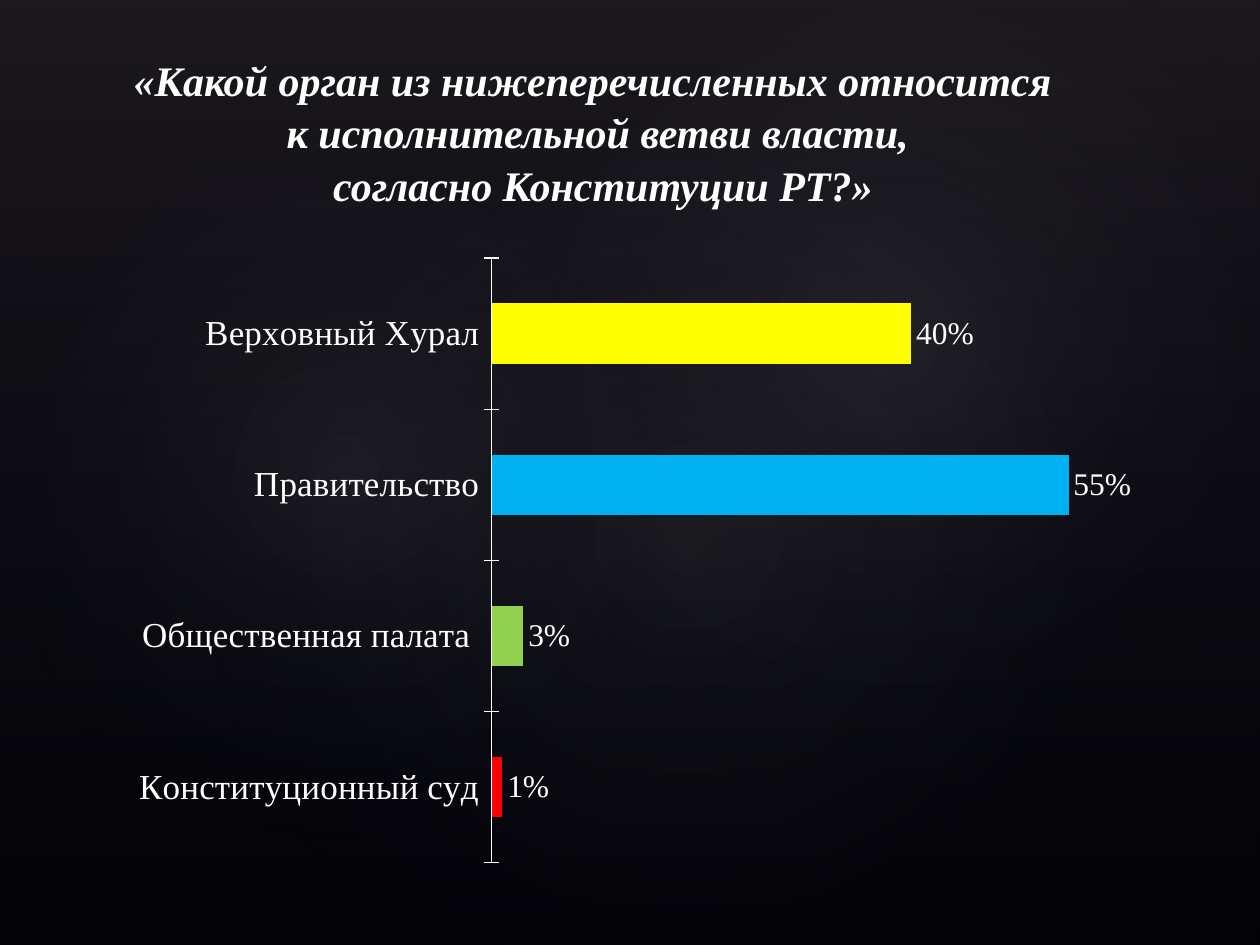
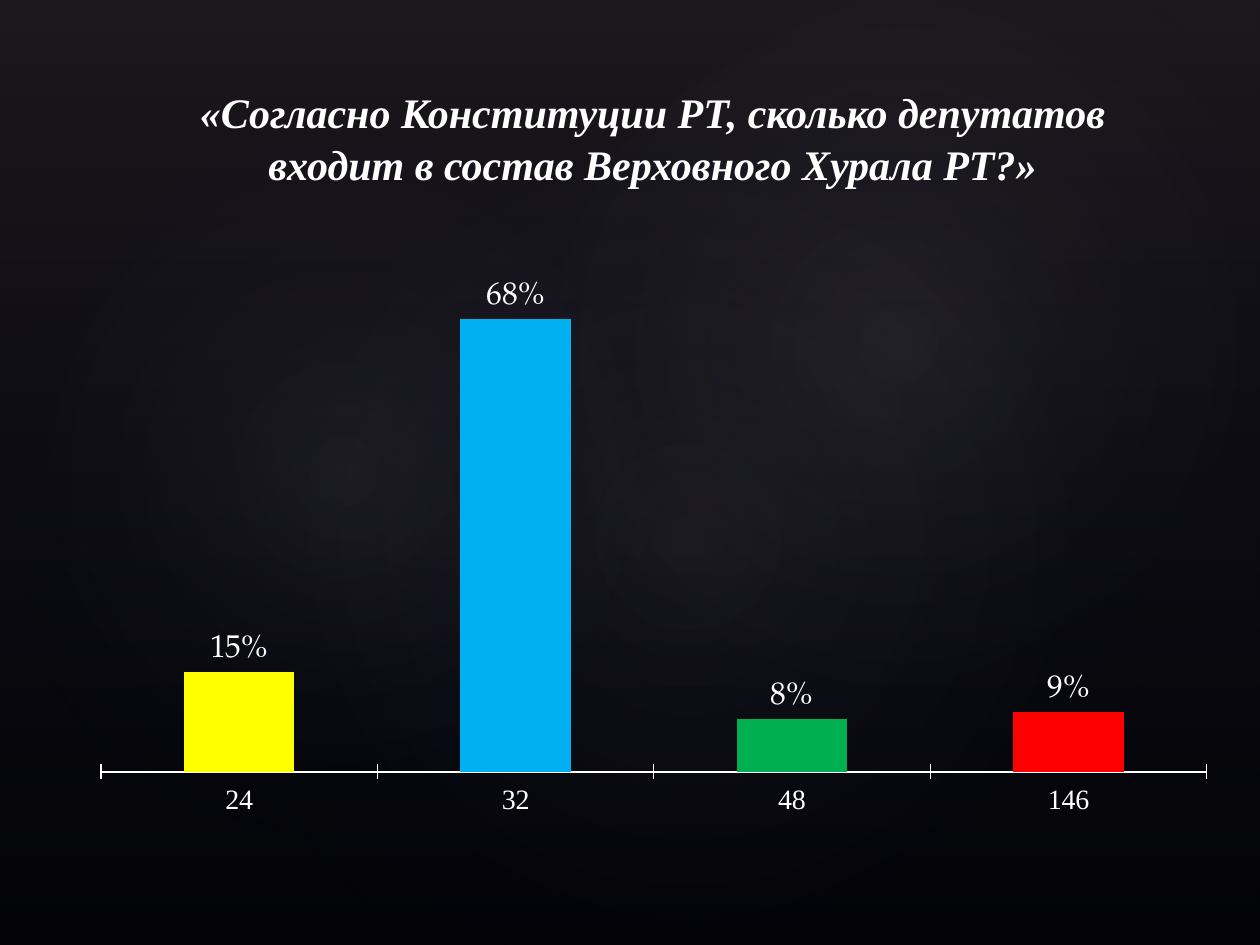
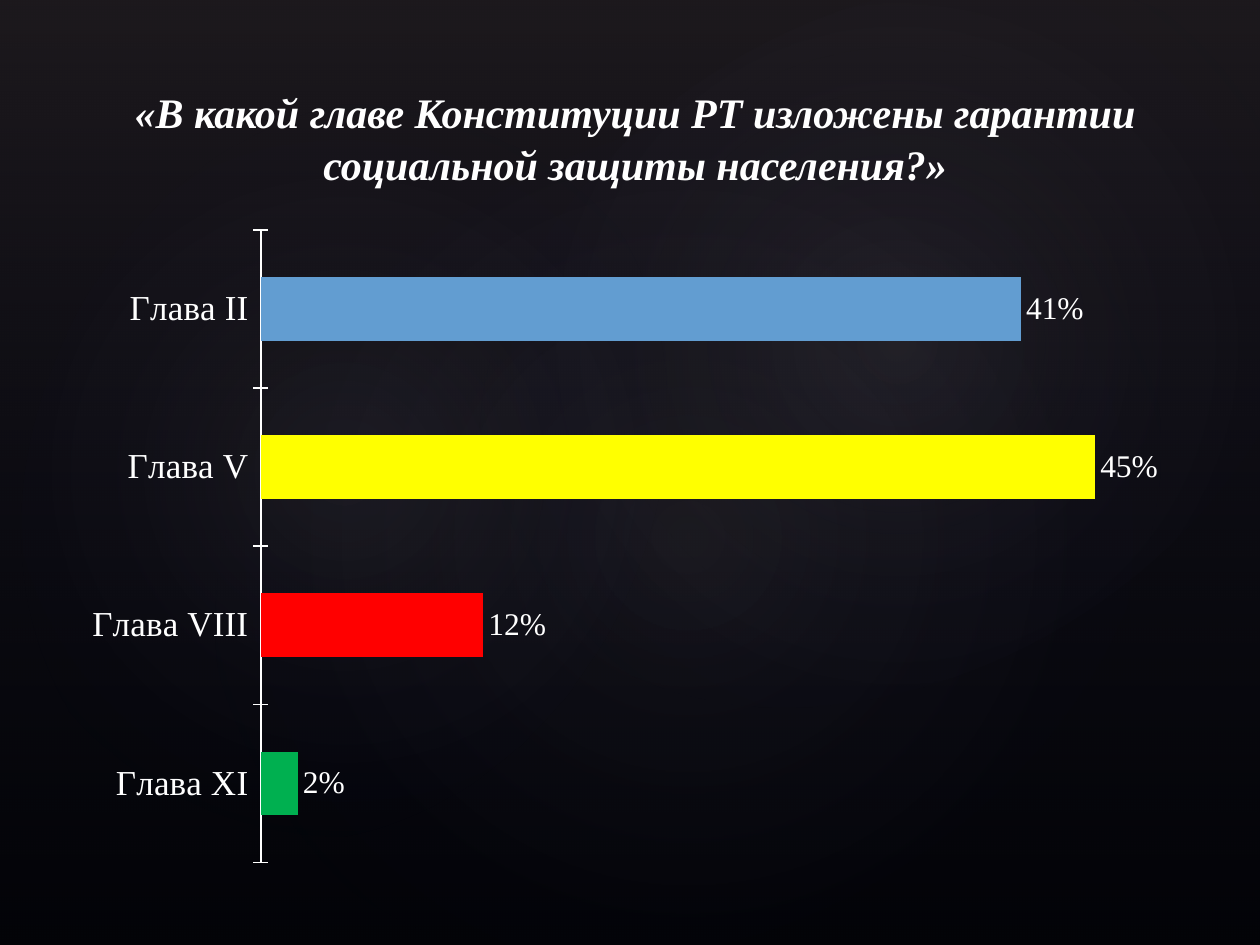
from dataclasses import dataclass

from pptx import Presentation
from pptx.chart.data import CategoryChartData
from pptx.dml.color import RGBColor
from pptx.enum.chart import XL_CHART_TYPE as ChartType
from pptx.enum.chart import XL_LABEL_POSITION as LabelPosition
from pptx.enum.chart import XL_TICK_MARK as TickMark
from pptx.enum.shapes import MSO_SHAPE as Preset
from pptx.enum.text import MSO_ANCHOR as Anchor
from pptx.enum.text import PP_ALIGN as Align
from pptx.oxml import parse_xml
from pptx.oxml.ns import nsdecls
from pptx.util import Cm, Pt


@dataclass(frozen=True)
class Theme:
    backdrop: str = "000000"
    haze: str = "504652"
    navy: str = "242852"
    glow: str = "C4BCC6"
    text: str = "FFFFFF"
    yellow: str = "FFFF00"
    sky: str = "00B0F0"
    blue: str = "629DD1"
    lime: str = "92D050"
    green: str = "00B050"
    red: str = "FF0000"
    serif: str = "Times New Roman"
    body: str = "TeX Gyre Pagella"
    title_size: int = 24
    label_size: int = 18
    bar_category_size: int = 20
    column_category_size: int = 16


THEME = Theme()

LINEAR_DOWN = '<a:lin ang="5400000" scaled="0"/>'
FROM_CENTRE = ('<a:path path="circle"><a:fillToRect l="50000" t="50000" '
               'r="50000" b="50000"/></a:path>')

# left, top, width, height, rotation, opacity of the centre in percent
GLOWS = [
    (3.81, 2.9, 20.12, 15.85, 328.7, 7),
    (-0.76, 3.25, 15.39, 12.45, 294.3, 8),
    (9.09, 0.33, 18.01, 13.21, 328.7, 8),
]


def color(code):
    return RGBColor.from_string(code)


def box(*lengths):
    return [Cm(length) for length in lengths]


def style_font(font, size, face):
    font.size = Pt(size)
    font.name = face
    font.color.rgb = color(THEME.text)


def fill_gradient(shape, stops, direction):
    """Fill with stops of (position, colour, opacity), all in percent."""
    stop_xml = "".join(
        f'<a:gs pos="{position * 1000}"><a:srgbClr val="{code}">'
        f'<a:alpha val="{opacity * 1000}"/></a:srgbClr></a:gs>'
        for position, code, opacity in stops)
    shape.fill.background()
    plain = shape._element.spPr.find("{*}noFill")
    plain.getparent().replace(plain, parse_xml(
        f'<a:gradFill {nsdecls("a")} rotWithShape="1">'
        f'<a:gsLst>{stop_xml}</a:gsLst>{direction}</a:gradFill>'))


def add_light(slide, preset, place, stops, direction, rotation=0):
    """Draw one borderless gradient and move it to the slide's layout."""
    light = slide.shapes.add_shape(preset, *place)
    light.shadow.inherit = False
    light.line.fill.background()
    light.rotation = rotation
    fill_gradient(light, stops, direction)
    slide.slide_layout.shapes._spTree.append(light._element)


def dress_layout(prs, slide):
    """Give the layout of the slide the dark backdrop that all slides share."""
    backdrop = slide.slide_layout.background.fill
    backdrop.solid()
    backdrop.fore_color.rgb = color(THEME.backdrop)
    add_light(slide, Preset.RECTANGLE, (0, 0, prs.slide_width, prs.slide_height),
              [(0, THEME.haze, 36), (100, THEME.navy, 10)], LINEAR_DOWN)
    for *place, rotation, opacity in GLOWS:
        add_light(slide, Preset.OVAL, box(*place),
                  [(0, THEME.glow, opacity), (58, THEME.navy, 0)],
                  FROM_CENTRE, rotation)


def add_question(slide, place, wording):
    frame = slide.shapes.add_textbox(*box(*place)).text_frame
    frame.word_wrap = True
    frame.vertical_anchor = Anchor.BOTTOM
    question = frame.paragraphs[0]
    question.text = wording
    question.alignment = Align.CENTER
    question.line_spacing = 1.04
    style_font(question.font, THEME.title_size, THEME.serif)
    question.font.bold = question.font.italic = True


def add_answers(slide, place, answers, horizontal=True):
    """Chart the answers, given as (category, share, colour)."""
    categories, shares, colors = zip(*answers)
    data = CategoryChartData(number_format="0%")
    data.categories = categories
    data.add_series("Series 1", shares)
    kind = ChartType.BAR_CLUSTERED if horizontal else ChartType.COLUMN_CLUSTERED
    chart = slide.shapes.add_chart(kind, *box(*place), data).chart
    chart.has_legend = chart.has_title = False
    style_font(chart.font, THEME.label_size, THEME.body)
    chart._chartSpace.find("{*}txPr").addprevious(parse_xml(
        f'<c:spPr {nsdecls("c", "a")}><a:noFill/><a:ln><a:noFill/></a:ln></c:spPr>'))

    chart.value_axis.visible = False
    chart.value_axis.has_major_gridlines = False
    axis = chart.category_axis
    axis.major_tick_mark = TickMark.CROSS
    axis.reverse_order = horizontal
    axis.format.line.color.rgb = color(THEME.text)
    style_font(axis.tick_labels.font,
               THEME.bar_category_size if horizontal else THEME.column_category_size,
               THEME.serif)

    plot = chart.plots[0]
    plot.gap_width = 150
    plot.vary_by_categories = False
    plot.has_data_labels = True
    labels = plot.data_labels
    labels.show_value = True
    labels.position = LabelPosition.OUTSIDE_END
    labels.number_format = "0%"
    labels.number_format_is_linked = False
    style_font(labels.font, THEME.label_size,
               THEME.serif if horizontal else THEME.body)
    for index, code in enumerate(colors):
        bar = plot.series[0].points[index].format.fill
        bar.solid()
        bar.fore_color.rgb = color(code)


def main():
    prs = Presentation()
    prs.slide_width, prs.slide_height = Cm(25.4), Cm(19.05)
    blank = prs.slide_layouts[6]
    executive, deputies, guarantees = (prs.slides.add_slide(blank) for _ in range(3))
    dress_layout(prs, executive)

    add_answers(executive, (2.39, 4.95, 20.62, 12.7), [
        ("Верховный Хурал", 0.40, THEME.yellow),
        ("Правительство", 0.55, THEME.sky),
        ("Общественная палата ", 0.03, THEME.lime),
        ("Конституционный суд", 0.01, THEME.red),
    ])
    add_question(executive, (1.57, 1.4, 20.96, 2.95),
                 "«Какой орган из нижеперечисленных относится \v"
                 "к исполнительной ветви власти,\v"
                 " согласно Конституции РТ?»")

    add_question(deputies, (2.97, 1.4, 20.37, 2.54),
                 "«Согласно Конституции РТ, сколько депутатов "
                 "входит в состав Верховного Хурала РТ?»")
    add_answers(deputies, (1.57, 4.57, 23.22, 12.12), [
        ("24", 0.15, THEME.yellow),
        ("32", 0.68, THEME.sky),
        ("48", 0.08, THEME.green),
        ("146", 0.09, THEME.red),
    ], horizontal=False)

    add_answers(guarantees, (1.4, 4.37, 23.01, 13.28), [
        ("Глава II", 0.41, THEME.blue),
        ("Глава V", 0.45, THEME.yellow),
        ("Глава VIII", 0.12, THEME.red),
        ("Глава XI", 0.02, THEME.green),
    ])
    add_question(guarantees, (2.39, 1.4, 20.83, 2.54),
                 "«В какой главе Конституции РТ изложены гарантии "
                 "социальной защиты населения?»")

    prs.save("out.pptx")


if __name__ == "__main__":
    main()
